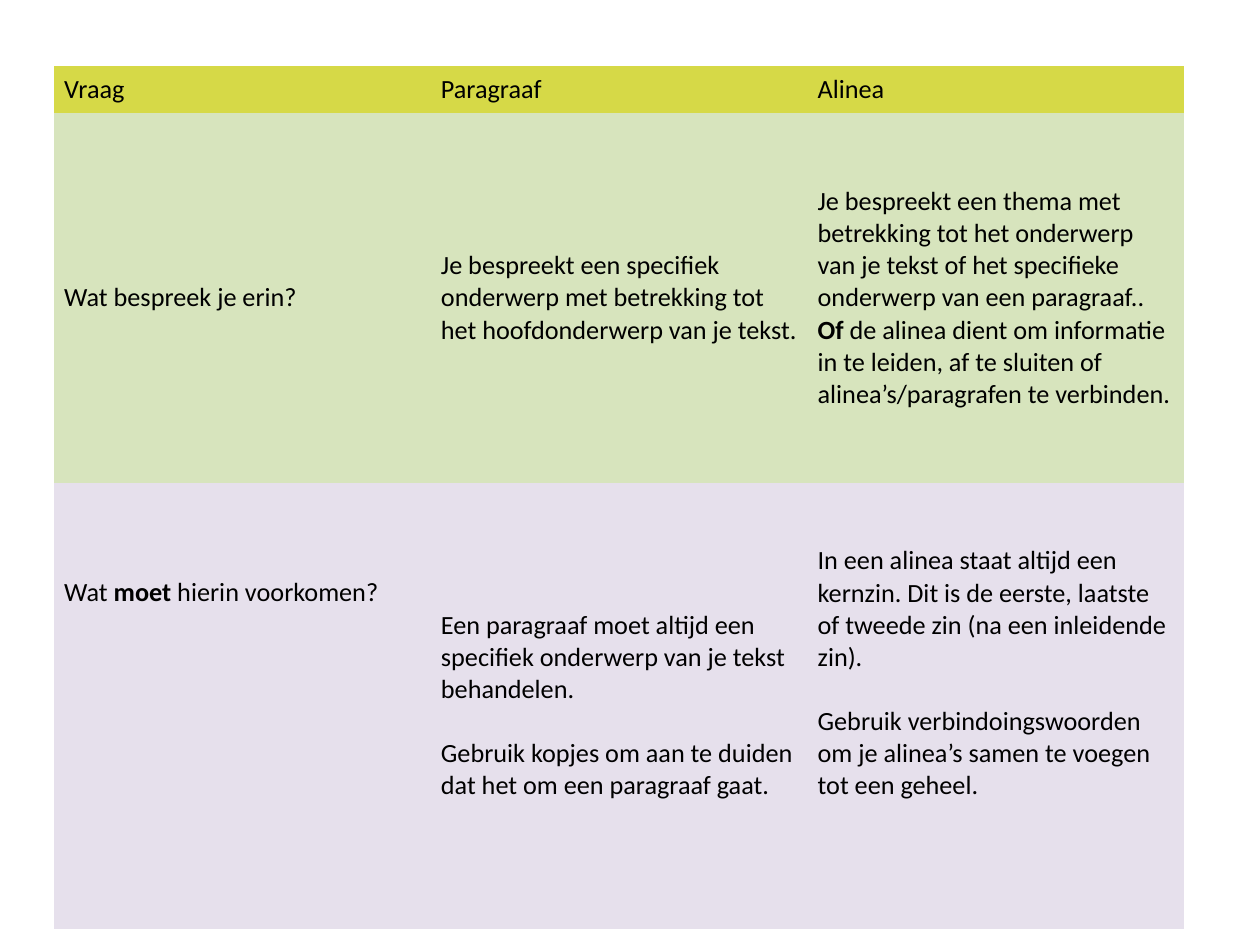
from pptx import Presentation
from pptx.dml.color import RGBColor as RGB
from pptx.enum.text import MSO_ANCHOR as Anchor
from pptx.oxml.ns import qn
from pptx.util import Inches, Pt

COLORS = {"text": "000000", "head": "D6D947", "topic": "D7E4BD", "must": "E6E0EC"}
NO_STYLE = "{2D5ABB26-0587-4C30-8999-92F81FD0307C}"
WIDTH = 2.99
GAP = 18.3

ROWS = [
    ("head", 0.38, 0, [["Vraag"], ["Paragraaf"], ["Alinea"]]),
    ("topic", 2.93, 0, [
        ["Wat bespreek je erin?"],
        ["Je bespreekt een specifiek onderwerp met betrekking tot het "
         "hoofdonderwerp van je tekst."],
        ["Je bespreekt een thema met betrekking tot het onderwerp van je tekst "
         "of het specifieke onderwerp van een paragraaf..",
         "**Of** de alinea dient om informatie in te leiden, af te sluiten of "
         "alinea’s/paragrafen te verbinden."],
    ]),
    ("must", 3.54, GAP, [
        ["Wat **moet** hierin voorkomen?"],
        ["Een paragraaf moet altijd een specifiek onderwerp van je tekst behandelen.",
         "Gebruik kopjes om aan te duiden dat het om een paragraaf gaat."],
        ["In een alinea staat altijd een kernzin. Dit is de eerste, laatste of "
         "tweede zin (na een inleidende zin).",
         "Gebruik verbindoingswoorden om je alinea’s samen te voegen tot een geheel."],
    ]),
]
LIFTS = {(2, 0): 1.79, (2, 2): 0.51}


def add_text(para, text):
    """Write text into a paragraph, with the parts between ** in bold."""
    for num, part in enumerate(text.split("**")):
        if part:
            run = para.add_run()
            run.text = part
            if num % 2:
                run.font.bold = True
    font = para.font
    font.name, font.size = "Calibri", Pt(15)
    font.color.rgb = RGB.from_string(COLORS["text"])


def fill_cell(cell, texts, color, gap, lift):
    """Fill one cell; lift raises its centred text by half that many inches."""
    cell.fill.solid()
    cell.fill.fore_color.rgb = RGB.from_string(COLORS[color])
    cell.vertical_anchor = Anchor.MIDDLE
    cell.margin_left = cell.margin_right = Inches(0.08)
    cell.margin_top = Inches(0.04)
    cell.margin_bottom = Inches(0.04 + lift)
    frame = cell.text_frame
    for num, text in enumerate(texts):
        para = frame.add_paragraph() if num else frame.paragraphs[0]
        if num and gap:
            para.space_before = Pt(gap)
        add_text(para, text)


def add_grid(slide):
    """Add the table that compares a section with a paragraph."""
    cols = len(ROWS[0][3])
    high = sum(row[1] for row in ROWS)
    table = slide.shapes.add_table(
        len(ROWS), cols, Inches(0.43), Inches(0.52),
        Inches(cols * WIDTH), Inches(high)).table
    table.first_row = table.horz_banding = False
    table._tbl.tblPr.find(qn("a:tableStyleId")).text = NO_STYLE
    for col in table.columns:
        col.width = Inches(WIDTH)
    for r, (color, height, gap, cells) in enumerate(ROWS):
        table.rows[r].height = Inches(height)
        for c, texts in enumerate(cells):
            fill_cell(table.cell(r, c), texts, color, gap, LIFTS.get((r, c), 0))


def main():
    """Build the slide and save it."""
    prs = Presentation()
    prs.slide_width, prs.slide_height = Inches(10), Inches(7.5)
    add_grid(prs.slides.add_slide(prs.slide_layouts[6]))
    prs.save("out.pptx")


if __name__ == "__main__":
    main()
